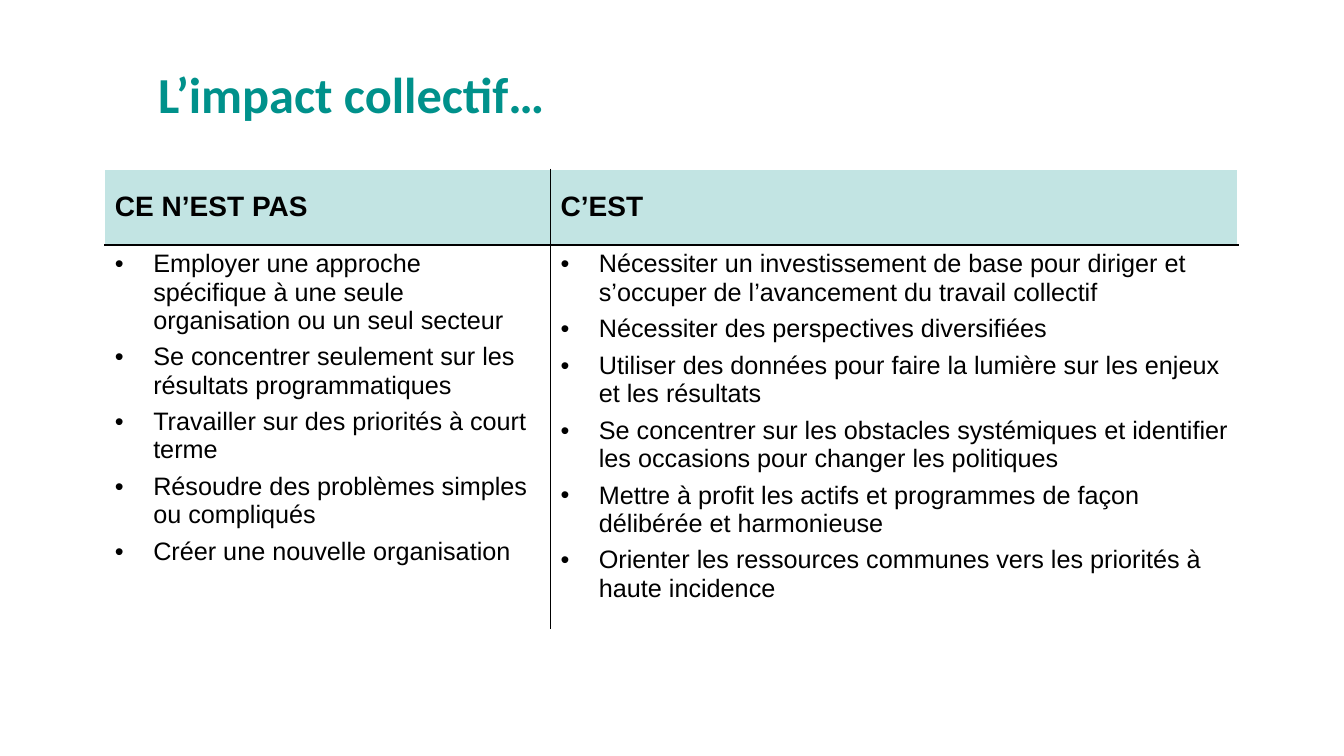
from lxml import etree
from pptx import Presentation
from pptx.dml.color import RGBColor
from pptx.enum.text import MSO_ANCHOR as Anchor
from pptx.oxml.ns import qn
from pptx.util import Inches, Pt

TEAL = RGBColor(0x00, 0x91, 0x8B)
BLACK = RGBColor(0x00, 0x00, 0x00)
WHITE = RGBColor(0xFF, 0xFF, 0xFF)

HEADINGS = ["CE N’EST PAS", "C’EST"]
POINTS = [
    [
        "Employer une approche spécifique à une seule organisation ou un seul secteur",
        "Se concentrer seulement sur les résultats programmatiques",
        "Travailler sur des priorités à court terme",
        "Résoudre des problèmes simples ou compliqués",
        "Créer une nouvelle organisation",
    ],
    [
        "Nécessiter un investissement de base pour diriger et s’occuper de l’avancement "
        "du travail collectif",
        "Nécessiter des perspectives diversifiées",
        "Utiliser des données pour faire la lumière sur les enjeux et les résultats",
        "Se concentrer sur les obstacles systémiques et identifier les occasions pour "
        "changer les politiques",
        "Mettre à profit les actifs et programmes de façon délibérée et harmonieuse",
        "Orienter les ressources communes vers les priorités à haute incidence",
    ],
]
COLUMN_WIDTHS = [4.42, 6.82]
ROW_HEIGHTS = [0.75, 3.81]
BULLET_INDENT = Inches(0.38)


def add_bullet(para):
    properties = para._p.get_or_add_pPr()
    properties.set("marL", str(BULLET_INDENT))
    properties.set("indent", str(-BULLET_INDENT))
    etree.SubElement(properties, qn("a:buFont"), typeface="Arial")
    etree.SubElement(properties, qn("a:buChar"), char="•")


def write_text(frame, lines, size, font="Arial", color=BLACK, bold=False,
               bullets=False, space_after=0):
    for index, line in enumerate(lines):
        para = frame.paragraphs[0] if index == 0 else frame.add_paragraph()
        if bullets:
            add_bullet(para)
        para.space_after = Pt(space_after)
        span = para.add_run()
        span.text = line
        span.font.name = font
        span.font.size = Pt(size)
        span.font.bold = bold
        span.font.color.rgb = color


def fill_cell(cell, color, opacity):
    cell.fill.solid()
    cell.fill.fore_color.rgb = color
    color_node = cell._tc.tcPr.find(".//" + qn("a:srgbClr"))
    etree.SubElement(color_node, qn("a:alpha"), val=str(opacity * 1000))


def set_borders(cell, left, right, top, bottom):
    properties = cell._tc.get_or_add_tcPr()
    sides = zip(("lnL", "lnR", "lnT", "lnB"), (left, right, top, bottom))
    for index, (side, color) in enumerate(sides):
        line = etree.Element(qn("a:" + side), w=str(Pt(1)))
        fill = etree.SubElement(line, qn("a:solidFill"))
        etree.SubElement(fill, qn("a:srgbClr"), val=str(color))
        properties.insert(index, line)


def add_title(page, text):
    box = page.shapes.add_textbox(Inches(1.47), Inches(0.58), Inches(9.15), Inches(0.71))
    box.text_frame.word_wrap = True
    write_text(box.text_frame, [text], 36, font="Calibri", color=TEAL, bold=True)


def add_comparison(page):
    frame = page.shapes.add_table(2, 2, Inches(1.04), Inches(1.68),
                                  Inches(sum(COLUMN_WIDTHS)), Inches(sum(ROW_HEIGHTS)))
    table = frame.table
    table.horz_banding = False
    for column, width in zip(table.columns, COLUMN_WIDTHS):
        column.width = Inches(width)
    for row, height in zip(table.rows, ROW_HEIGHTS):
        row.height = Inches(height)

    for index, (heading, points) in enumerate(zip(HEADINGS, POINTS)):
        header, body = table.cell(0, index), table.cell(1, index)
        # Only the lines between cells are black
        left, right = (WHITE, BLACK) if index == 0 else (BLACK, WHITE)

        header.vertical_anchor = Anchor.MIDDLE
        write_text(header.text_frame, [heading], 20, bold=True)
        fill_cell(header, TEAL, 24)
        set_borders(header, left, right, WHITE, BLACK)

        write_text(body.text_frame, points, 18, bullets=True, space_after=6)
        body.fill.background()
        set_borders(body, left, right, BLACK, WHITE)


def main():
    deck = Presentation()
    deck.slide_width, deck.slide_height = Inches(13.33), Inches(7.5)
    page = deck.slides.add_slide(deck.slide_layouts[6])
    add_title(page, "L’impact collectif…")
    add_comparison(page)
    deck.save("out.pptx")


if __name__ == "__main__":
    main()
